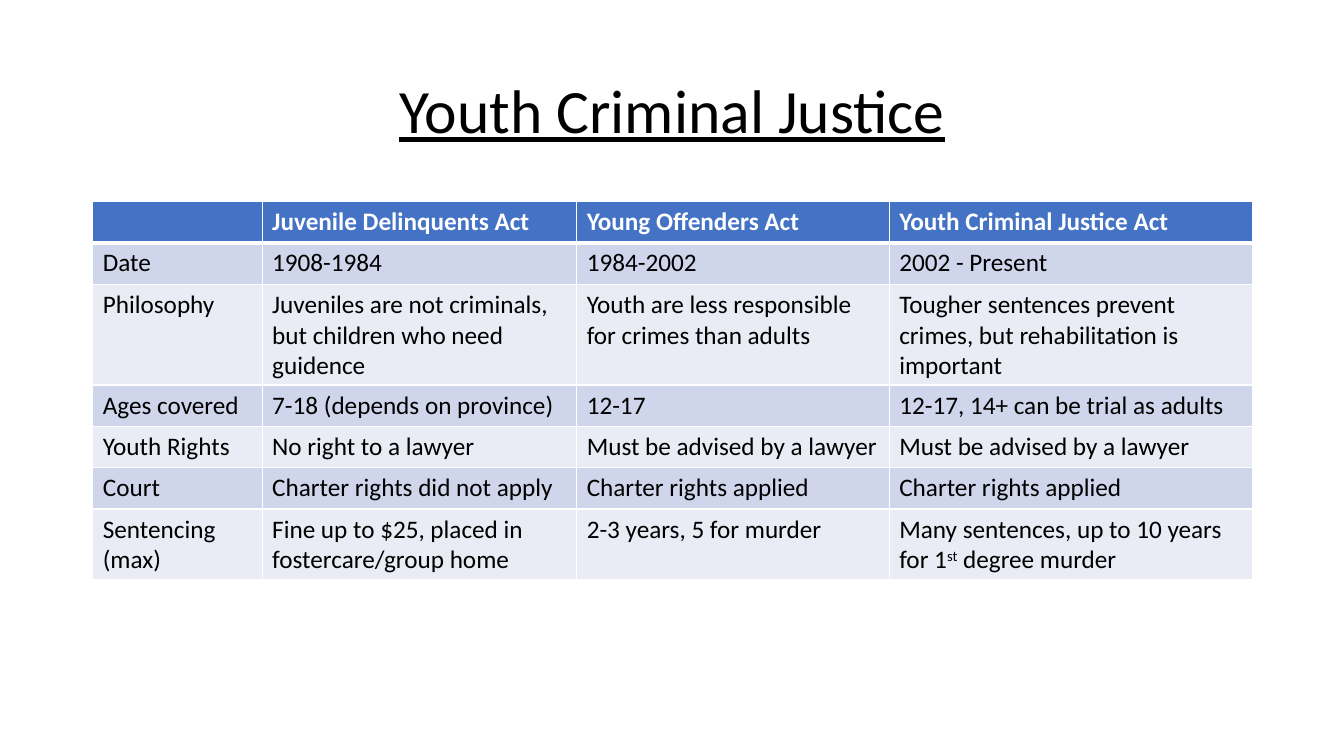
from dataclasses import dataclass

from lxml.etree import SubElement
from pptx import Presentation
from pptx.dml.color import RGBColor
from pptx.enum.text import MSO_ANCHOR, PP_ALIGN
from pptx.oxml.ns import qn
from pptx.util import Inches, Pt


@dataclass(frozen=True)
class Theme:
    font: str = "Calibri"
    title_size: int = 44
    table_size: int = 18
    text: str = "000000"
    white: str = "FFFFFF"
    header: str = "4472C4"
    bands: tuple = ("CFD5EA", "E9EBF5")
    thin_border: int = 1
    header_border: int = 3


THEME = Theme()

COLUMN_WIDTHS = (1.68, 3.12, 3.1, 3.6)
ROW_HEIGHT = 0.41

# A cell is a string, or a tuple whose every second part is superscript.
ACTS = (
    ("", "Juvenile Delinquents Act", "Young Offenders Act", "Youth Criminal Justice Act"),
    ("Date", "1908-1984", "1984-2002", "2002 - Present"),
    ("Philosophy",
     "Juveniles are not criminals, but children who need guidence",
     "Youth are less responsible for crimes than adults",
     "Tougher sentences prevent crimes, but rehabilitation is important"),
    ("Ages covered", "7-18 (depends on province)", "12-17",
     "12-17, 14+ can be trial as adults"),
    ("Youth Rights", "No right to a lawyer", "Must be advised by a lawyer",
     "Must be advised by a lawyer"),
    ("Court", "Charter rights did not apply", "Charter rights applied",
     "Charter rights applied"),
    ("Sentencing (max)",
     "Fine up to $25, placed in fostercare/group home",
     "2-3 years, 5 for murder",
     ("Many sentences, up to 10 years for 1", "st", " degree murder")),
)


def write_text(para, text, *, size, color=THEME.text, bold=False, underline=False):
    """Write a string, or alternating normal and superscript parts."""
    parts = (text,) if isinstance(text, str) else text
    para.font.size = Pt(size)
    for index, part in enumerate(parts):
        if not part:
            continue
        span = para.add_run()
        span.text = part
        span.font.name = THEME.font
        span.font.size = Pt(size)
        span.font.bold = bold
        span.font.underline = underline
        span.font.color.rgb = RGBColor.from_string(color)
        if index % 2:
            span.font._element.set("baseline", "30000")


def add_title(page, text):
    box = page.shapes.add_textbox(Inches(0.92), Inches(0.4), Inches(11.5), Inches(1.45))
    frame = box.text_frame
    frame.word_wrap = True
    frame.vertical_anchor = MSO_ANCHOR.MIDDLE
    para = frame.paragraphs[0]
    para.alignment = PP_ALIGN.CENTER
    para.line_spacing = 0.9
    write_text(para, text, size=THEME.title_size, underline=True)


def set_borders(cell, top, bottom):
    """Draw white borders, which must come before the fill in the cell XML."""
    properties = cell._tc.get_or_add_tcPr()
    widths = {"lnL": THEME.thin_border, "lnR": THEME.thin_border,
              "lnT": top, "lnB": bottom}
    for position, (side, width) in enumerate(widths.items()):
        line = SubElement(properties, qn(f"a:{side}"), w=str(Pt(width)))
        fill = SubElement(line, qn("a:solidFill"))
        SubElement(fill, qn("a:srgbClr"), val=THEME.white)
        properties.insert(position, line)


def add_comparison_table(page, rows):
    frame = page.shapes.add_table(
        len(rows), len(COLUMN_WIDTHS), Inches(0.92), Inches(2),
        Inches(sum(COLUMN_WIDTHS)), Inches(ROW_HEIGHT * len(rows)))
    table = frame.table
    for column, width in zip(table.columns, COLUMN_WIDTHS):
        column.width = Inches(width)

    for row_index, texts in enumerate(rows):
        table.rows[row_index].height = Inches(ROW_HEIGHT)
        is_header = row_index == 0
        fill = THEME.header if is_header else THEME.bands[(row_index - 1) % 2]
        top = THEME.header_border if row_index == 1 else THEME.thin_border
        bottom = THEME.header_border if is_header else THEME.thin_border
        for column_index, text in enumerate(texts):
            cell = table.cell(row_index, column_index)
            cell.fill.solid()
            cell.fill.fore_color.rgb = RGBColor.from_string(fill)
            set_borders(cell, top, bottom)
            write_text(cell.text_frame.paragraphs[0], text, size=THEME.table_size,
                       color=THEME.white if is_header else THEME.text, bold=is_header)


def main():
    # Deck and blank page
    deck = Presentation()
    deck.slide_width = Inches(13.33)
    deck.slide_height = Inches(7.5)
    page = deck.slides.add_slide(deck.slide_layouts[6])

    # Title and comparison of the three acts
    add_title(page, "Youth Criminal Justice")
    add_comparison_table(page, ACTS)

    deck.save("out.pptx")


if __name__ == "__main__":
    main()
